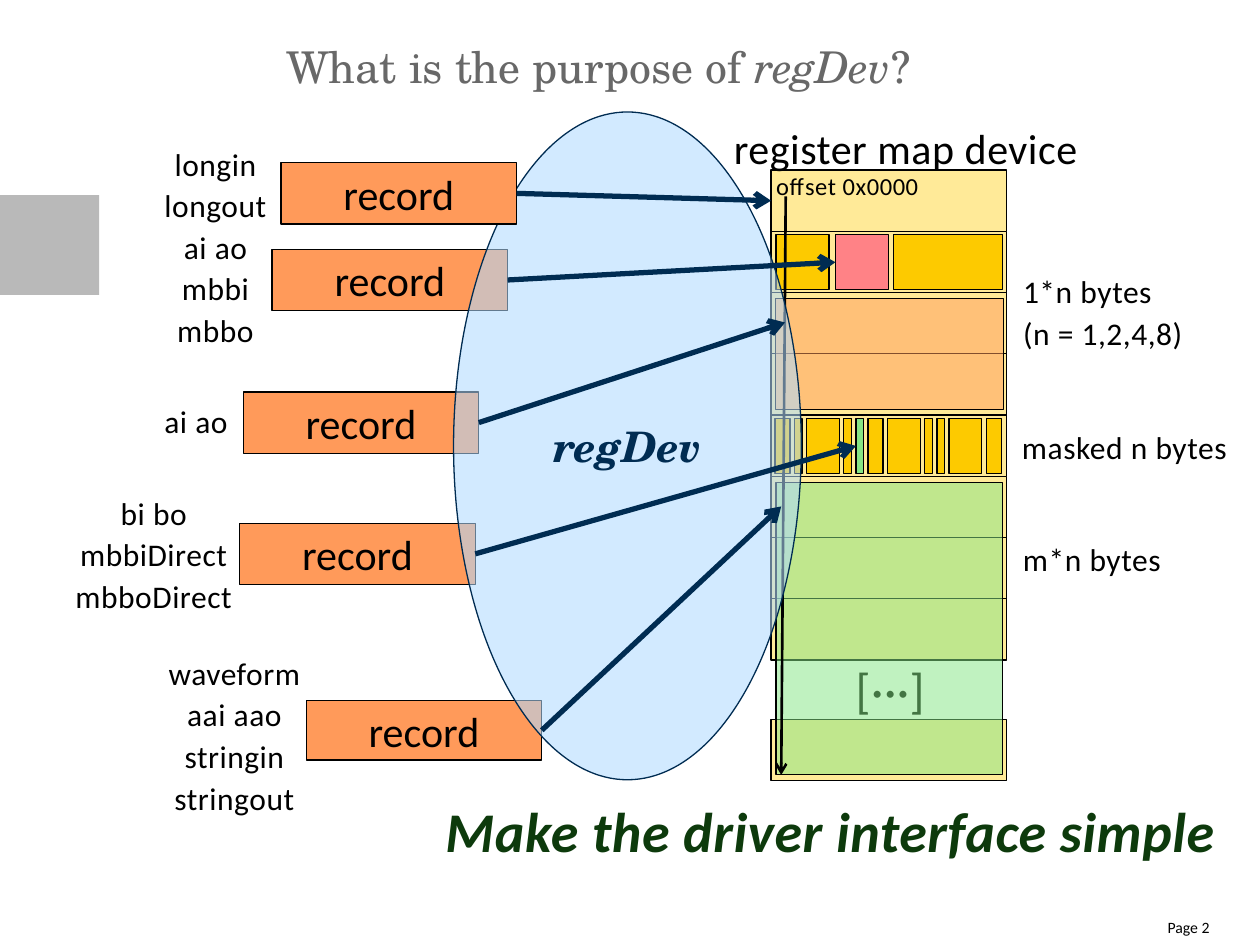
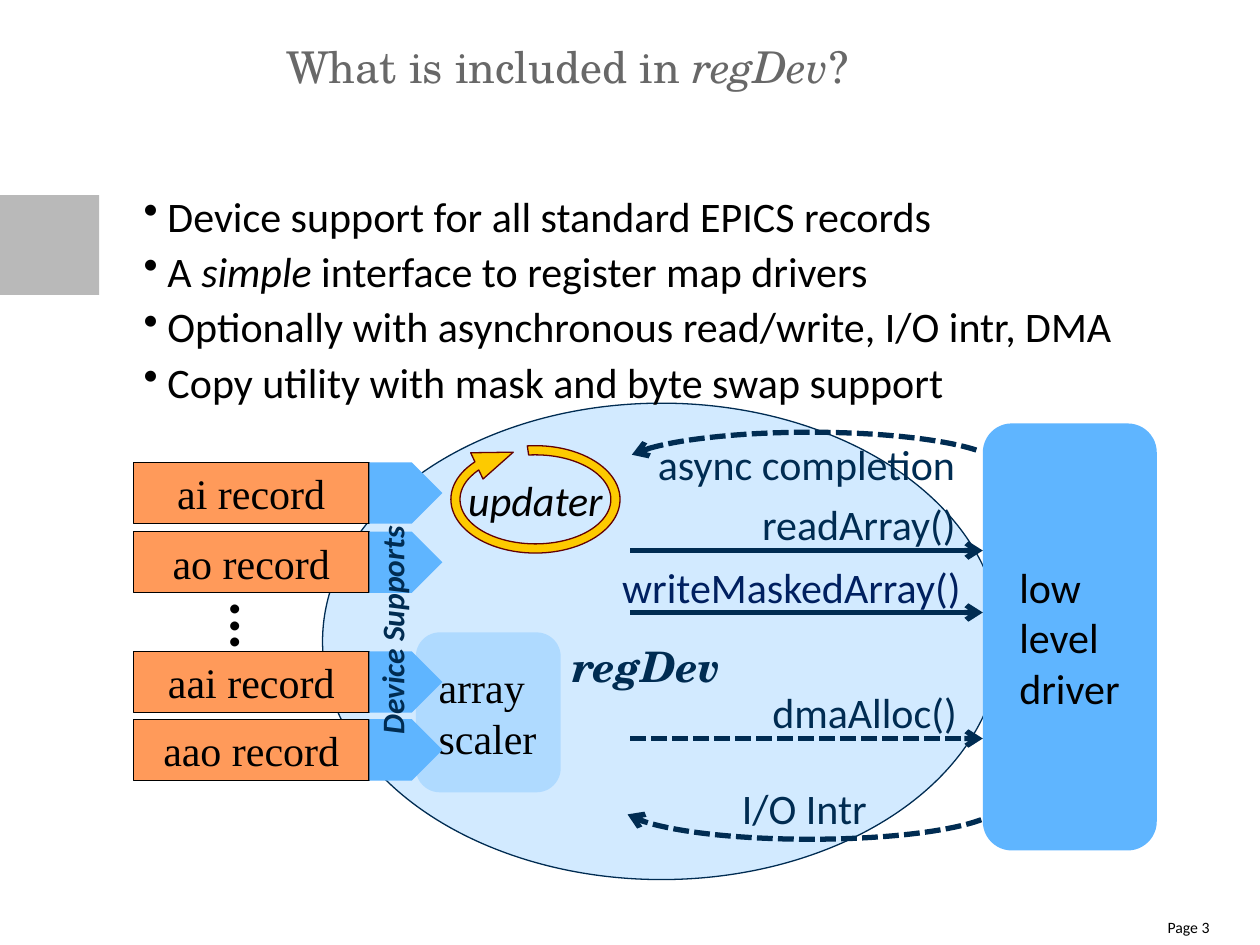
from pptx import Presentation
from pptx.dml.color import RGBColor
from pptx.enum.dml import MSO_LINE
from pptx.enum.shapes import MSO_CONNECTOR, MSO_SHAPE
from pptx.enum.text import MSO_ANCHOR, MSO_AUTO_SIZE, PP_ALIGN
from pptx.oxml.ns import qn
from pptx.util import Pt
from lxml.etree import SubElement

BLACK = RGBColor(0x00, 0x00, 0x00)
GREY = RGBColor(0xB9, 0xB9, 0xB9)
SLATE = RGBColor(0x68, 0x68, 0x68)
NAVY = RGBColor(0x00, 0x2C, 0x52)
INDIGO = RGBColor(0x00, 0x20, 0x60)
PALE = RGBColor(0xAF, 0xDA, 0xFF)
BLUE = RGBColor(0x5F, 0xB5, 0xFF)
ORANGE = RGBColor(0xFF, 0x9A, 0x5A)
CREAM = RGBColor(0xFF, 0xEA, 0x98)
GOLD = RGBColor(0xFD, 0xCA, 0x00)
PINK = RGBColor(0xFF, 0x82, 0x86)
LIME = RGBColor(0x85, 0xE6, 0x84)
FOREST = RGBColor(0x0D, 0x3A, 0x0C)
MAROON = RGBColor(0x62, 0x00, 0x03)
SCHOLA, TIMES = "TeX Gyre Schola", "Times New Roman"
LEFT, MID, RIGHT = PP_ALIGN.LEFT, PP_ALIGN.CENTER, PP_ALIGN.RIGHT
RECT, OVAL, ROUND = MSO_SHAPE.RECTANGLE, MSO_SHAPE.OVAL, MSO_SHAPE.ROUNDED_RECTANGLE


def draw(slide, kind, x, y, w, h, fill=None, line=None, alpha=None):
    """Add a preset shape, or a text box when kind is None."""
    area = Pt(x), Pt(y), Pt(w), Pt(h)
    if kind is None:
        return slide.shapes.add_textbox(*area)
    shape = slide.shapes.add_shape(kind, *area)
    shape.shadow.inherit = False
    if fill is None:
        shape.fill.background()
    else:
        shape.fill.solid()
        shape.fill.fore_color.rgb = fill
    if line is None:
        shape.line.fill.background()
    else:
        shape.line.color.rgb = line
        shape.line.width = Pt(0.75)
    if alpha:
        color = shape.element.spPr.find(qn("a:solidFill"))[0]
        SubElement(color, qn("a:alpha")).set("val", str(alpha * 1000))
    return shape


def write(shape, text, size, color=BLACK, font="Calibri", align=LEFT, bold=None,
          slant=None, pad=(0, 0, 0, 0), wrap=True, lead=None, track=None):
    """Fill a shape with lines of text; _underscores_ mark italics."""
    frame = shape.text_frame
    frame.word_wrap = wrap
    frame.margin_left, frame.margin_top, frame.margin_right, frame.margin_bottom = map(Pt, pad)
    for i, row in enumerate(text.split("\n")):
        para = frame.add_paragraph() if i else frame.paragraphs[0]
        para.alignment = align
        if lead:
            para.line_spacing = lead
        para.font.size, para.font.name = Pt(size), font
        para.font.bold, para.font.italic = bold, slant
        para.font.color.rgb = color
        if track:
            para._p.pPr.find(qn("a:defRPr")).set("spc", str(track))
        for j, part in enumerate(row.split("_")):
            run = para.add_run()
            run.text = part
            if j % 2:
                run.font.italic = True
    return frame


deck = Presentation()
deck.slide_width, deck.slide_height = Pt(720), Pt(540)
arrows = []  # shape, colour, width, dashed, end with the head

# Shared band, title and page number
slides = []
for page, title in enumerate(["What is the purpose of _regDev_?",
                              "What is included in _regDev_?"], 2):
    slide = deck.slides.add_slide(deck.slide_layouts[6])
    draw(slide, RECT, 0, 111.5, 56.7, 57, GREY)
    write(draw(slide, None, 163.5, 23, 528.5, 40), title, 25, SLATE, SCHOLA)
    write(draw(slide, None, 645.8, 524.2, 45.4, 15.8), f"Page {page}", 9, align=RIGHT)
    slides.append(slide)
first, second = slides

# Register map: eight rows, a gap, one last row
dots = draw(first, None, 489, 373.5, 40.3, 37.5)
write(dots, "[···]", 28, wrap=False, lead=1.1, track=30)
rows = [draw(first, MSO_SHAPE.FLOWCHART_PROCESS, 440.6, y, 134.6, 35, CREAM, BLACK)
        for y in [97.2 + 35 * k for k in range(8)] + [411]]

# Single registers in the second row
for x, w, fill in [(443.5, 30.2, GOLD), (510.5, 62.6, GOLD), (477.4, 30.2, PINK)]:
    field = draw(first, RECT, x, 134, w, 31.7, fill, BLACK)

# Bit fields of the masked row
thin, mid, wide = 4.3, 8.6, 18.7
x = 442.8
for i, w in enumerate([mid, thin, wide, thin, thin, mid, wide, thin, thin, wide, mid]):
    bits = draw(first, RECT, x, 239, w, 31.7, LIME if i == 4 else GOLD, BLACK)
    if i == 4:
        mask = bits
    x += w + 2.6

# Arrays over several rows
draw(first, RECT, 443, 170.6, 130.3, 63.4, ORANGE, BLACK, 51)
draw(first, RECT, 443.5, 275.8, 129.6, 167, LIME, BLACK, 51)

# Offset axis
axis = first.shapes.add_connector(MSO_CONNECTOR.STRAIGHT, Pt(449), Pt(112.3), Pt(446.4), Pt(442.8))
arrows.append((axis, BLACK, 1.5, False, "tailEnd"))

# Records below the oval, the topmost one above it
records = []
for x, y, h in [(155.5, 142.5, 35), (139, 224, 35), (137, 299, 35), (175, 400.3, 34),
                (160.6, 93, 35)]:
    if y == 93:
        oval = draw(first, OVAL, 259.2, 64, 198.7, 381.6, PALE, NAVY, 56)
        write(oval, "regDev", 24, NAVY, SCHOLA, MID, True, True, wrap=False)
    record = draw(first, RECT, x, y, 134.6, h, ORANGE, BLACK)
    write(record, "record", 24, align=MID)
    records.append(record)

# Arrows from records to registers
for record, x, y, goal in [(records[4], 440.6, 114.7, rows[0]), (records[0], 477.4, 149.8, field),
                           (records[1], 448.6, 184.3, None), (records[2], 489, 254.9, mask),
                           (records[3], 446.4, 289.4, None)]:
    link = first.shapes.add_connector(MSO_CONNECTOR.STRAIGHT, 0, 0, Pt(x), Pt(y))
    link.begin_connect(record, 3)
    if goal:
        link.end_connect(goal, 1)
    arrows.append((link, NAVY, 3, False, "tailEnd"))

# Labels
for text, x, y, w, h, size, align in [
        ("register map device", 418.3, 67, 198.7, 30.2, 24, MID),
        ("offset 0x0000", 443.5, 95.8, 82, 18, 14, LEFT),
        ("longin\nlongout\nai ao\nmbbi\nmbbo", 93.6, 80.6, 59, 120.2, 18, MID),
        ("ai ao", 93.6, 227.5, 36.7, 23, 18, MID),
        ("bi bo\nmbbiDirect\nmbboDirect", 42.5, 280, 90.7, 72, 18, MID),
        ("waveform\naai aao\nstringin\nstringout", 95.8, 371.5, 76.3, 95.8, 18, MID),
        ("1*n bytes\n(n = 1,2,4,8)", 584.6, 153.4, 92.9, 48.2, 18, LEFT),
        ("masked n bytes", 584, 242.6, 118.8, 23.8, 18, LEFT),
        ("m*n bytes", 584.6, 306.7, 80, 23.8, 18, LEFT)]:
    frame = write(draw(first, None, x, y, w, h), text, size, align=align,
                  wrap=False, lead=1.1, track=30)
    frame.auto_size = MSO_AUTO_SIZE.SHAPE_TO_FIT_TEXT
motto = draw(first, None, 250.6, 451.4, 444.2, 40.3)
write(motto, "Make the driver interface simple", 32, FOREST, align=RIGHT, bold=True,
      slant=True, wrap=False, lead=1.1, track=30)

# Second slide: oval and scaler
oval = draw(second, OVAL, 184.3, 230.4, 387.4, 272.2, PALE, NAVY, 56)
write(oval, "regDev", 24, NAVY, SCHOLA, MID, True, True, (0, 28, 17.3, 0), False)
scaler = draw(second, ROUND, 237.6, 361.4, 82.8, 91.4, PALE)
write(scaler, "array scaler", 24, font=TIMES, pad=(9, 3.6, 5, 3.6))

# Bullet list
frame = write(draw(second, None, 82, 105.8, 610, 368.6),
              "Device support for all standard EPICS records\n"
              "A _simple_ interface to register map drivers\n"
              "Optionally with asynchronous read/write, I/O intr, DMA\n"
              "Copy utility with mask and byte swap support", 24, lead=1.1)
for para in frame.paragraphs:
    props = para._p.pPr
    props.set("marL", str(Pt(13.7)))
    props.set("indent", str(-Pt(13.7)))
    dot = SubElement(props, qn("a:buChar"))
    dot.set("char", "•")
    props.find(qn("a:defRPr")).addprevious(dot)

# Records with their device supports
for name, y in [("ai", 264.2), ("ao", 303.8), ("aai", 372.2), ("aao", 411)]:
    record = draw(second, RECT, 76.3, y, 134.6, 35, ORANGE, BLACK)
    write(record, f"{name} record", 24, font=TIMES, align=MID)
    draw(second, MSO_SHAPE.PENTAGON, 211, y, 41.8, 35, BLUE)
dots = draw(second, None, 127.4, 335.5, 28.8, 45.4)
dots.rotation = 90
write(dots, "···", 36, wrap=False, lead=1.1, track=30)
label = draw(second, None, 151.2, 339.8, 145.4, 28.8)
label.rotation = 270
write(label, "Device Supports", 18, NAVY, bold=True, slant=True, pad=(7.2, 3.6, 7.2, 3.6))

# Updater loop
loop = draw(second, MSO_SHAPE.CIRCULAR_ARROW, 252, 249, 108, 72.7, GOLD, MAROON)
for i, value in enumerate([0.072, 21.086, 125.836, 156.812, 0.114]):
    loop.adjustments[i] = value
write(loop, "updater", 24, align=MID, slant=True, wrap=False)

# Driver and its calls
driver = draw(second, ROUND, 561.6, 242, 99.4, 244, BLUE)
write(driver, "low level driver", 24, pad=(16, 3.6, 7.2, 3.6))
for text, x, y, w, level, color, dashed in [
        ("readArray()", 428.4, 281.5, 126.7, 314.6, NAVY, False),
        ("writeMaskedArray()", 348.5, 317.5, 216, 350, INDIGO, False),
        ("dmaAlloc()", 434.2, 388.8, 123.8, 422, NAVY, True)]:
    link = second.shapes.add_connector(MSO_CONNECTOR.STRAIGHT, Pt(360), Pt(level), Pt(561.6), Pt(level))
    arrows.append((link, NAVY, 3, dashed, "tailEnd"))
    frame = write(draw(second, None, x, y, w, 36), text, 24, color,
                  pad=(7.2, 3.6, 7.2, 3.6), wrap=False)
    frame.auto_size = MSO_AUTO_SIZE.SHAPE_TO_FIT_TEXT

# Callbacks from the driver
for text, y, start, stop, anchor, end in [
        ("I/O Intr", 440, 3.02, 106.16, MSO_ANCHOR.BOTTOM, "tailEnd"),
        ("async completion", 247, 110.338, 212.964, MSO_ANCHOR.TOP, "headEnd")]:
    arc = draw(second, MSO_SHAPE.ARC, 354.2, y, 217.4, 39.6)
    arc.adjustments[0], arc.adjustments[1] = start, stop
    frame = write(arc, text, 24, NAVY, align=MID, pad=(7.2, 3.6, 7.2, 3.6))
    frame.vertical_anchor = anchor
    arrows.append((arc, NAVY, 3, True, end))

# Line style and heads of all arrows
for arrow, color, width, dashed, end in arrows:
    arrow.line.color.rgb = color
    arrow.line.width = Pt(width)
    if dashed:
        arrow.line.dash_style = MSO_LINE.SQUARE_DOT
    props = arrow.element.spPr
    SubElement(props.find(qn("a:ln")), qn(f"a:{end}")).set("type", "arrow")
    if props.find(qn("a:effectLst")) is None:
        SubElement(props, qn("a:effectLst"))

deck.save("out.pptx")
